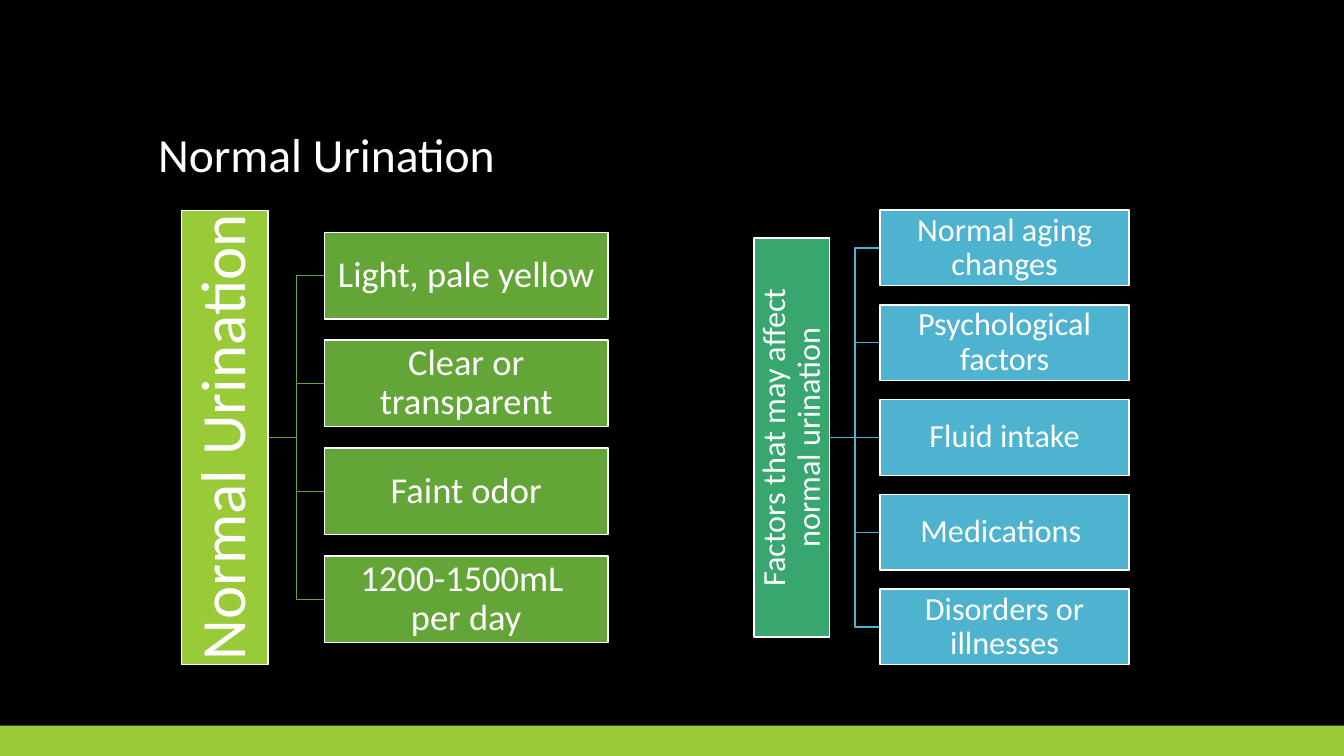
from lxml import etree
from pptx import Presentation
from pptx.dml.color import RGBColor
from pptx.enum.shapes import MSO_CONNECTOR, MSO_SHAPE
from pptx.enum.text import MSO_ANCHOR, PP_ALIGN
from pptx.oxml.ns import qn
from pptx.util import Inches, Pt

RECT = MSO_SHAPE.RECTANGLE
STRAIGHT = MSO_CONNECTOR.STRAIGHT
LEFT, CENTER = PP_ALIGN.LEFT, PP_ALIGN.CENTER
MIDDLE, BOTTOM = MSO_ANCHOR.MIDDLE, MSO_ANCHOR.BOTTOM
COLORS = {
    "black": "000000",
    "white": "FFFFFF",
    "lime": "99CB38",
    "green": "63A537",
    "teal": "37A76F",
    "blue": "4EB3CF",
}


def rgb(name):
    return RGBColor.from_string(COLORS[name])


def write(sp, text, size, align=CENTER, anchor=MIDDLE, inset=0.02, after=0.0):
    """Put one formatted paragraph into a shape; a newline breaks the line."""
    tf = sp.text_frame
    tf.word_wrap = True
    tf.vertical_anchor = anchor
    tf.margin_left = tf.margin_right = Inches(inset)
    tf.margin_top = tf.margin_bottom = Inches(min(inset, 0.05))
    p = tf.paragraphs[0]
    p.text = text
    p.alignment = align
    p.line_spacing = 0.9
    p.space_after = Pt(after)
    for r in p.runs:
        r.font.name = "Calibri"
        r.font.size = Pt(size)
        r.font.color.rgb = rgb("white")


prs = Presentation()
prs.slide_width, prs.slide_height = Inches(13.33), Inches(7.5)
slide = prs.slides.add_slide(prs.slide_layouts[6])
slide.background.fill.solid()
slide.background.fill.fore_color.rgb = rgb("black")
shapes = slide.shapes

bar = shapes.add_shape(RECT, 0, Inches(7.2), prs.slide_width, Inches(0.3))
bar.shadow.inherit = False
bar.fill.solid()
bar.fill.fore_color.rgb = rgb("lime")
bar.line.fill.background()

title = shapes.add_textbox(Inches(1.47), Inches(0.51), Inches(10.4), Inches(1.35))
write(title, "Normal Urination", 34, align=LEFT, anchor=BOTTOM, inset=0.1)

# Both trees are centred on one horizontal axis
AXIS = 4.34
trees = [
    dict(root="Normal Urination", root_color="lime", root_size=45, inset=0.03,
         root_right=2.66, root_length=4.51, thick=0.86,
         leaf_left=3.22, leaf_width=2.81, pitch=1.07, leaf_color="green", leaf_size=26,
         leaves=["Light, pale yellow", "Clear or transparent", "Faint odor",
                 "1200-1500mL \nper day"]),
    dict(root="Factors that may affect normal urination", root_color="teal",
         root_size=23, inset=0.02, root_right=8.23, root_length=3.96, thick=0.75,
         leaf_left=8.73, leaf_width=2.47, pitch=0.94, leaf_color="blue", leaf_size=23,
         leaves=["Normal aging changes", "Psychological factors", "Fluid intake",
                 "Medications ", "Disorders or illnesses"]),
]

for tree in trees:
    start, end, thick = tree["root_right"], tree["leaf_left"], tree["thick"]
    bend = (start + end) / 2
    count = len(tree["leaves"])
    centers = [AXIS + (i - (count - 1) / 2) * tree["pitch"] for i in range(count)]

    for y in reversed(centers):
        if y == AXIS:
            link = shapes.add_connector(STRAIGHT, Inches(start), Inches(y),
                                        Inches(end), Inches(y))
            etree.SubElement(link.line._get_or_add_ln().getparent(), qn("a:effectLst"))
        else:
            path = shapes.build_freeform(Inches(start), Inches(AXIS))
            path.add_line_segments([(Inches(bend), Inches(AXIS)),
                                    (Inches(bend), Inches(y)),
                                    (Inches(end), Inches(y))], close=False)
            link = path.convert_to_shape()
            link.shadow.inherit = False
            link.fill.background()
        link.line.color.rgb = rgb(tree["leaf_color"])
        link.line.width = Pt(1)

    # The root is a wide box turned to read upwards
    length = tree["root_length"]
    boxes = [(tree["root"], start - thick / 2 - length / 2, AXIS, length, 270,
              tree["root_color"], tree["root_size"], tree["inset"])]
    boxes += [(text, end, y, tree["leaf_width"], 0,
               tree["leaf_color"], tree["leaf_size"], 0.02)
              for text, y in zip(tree["leaves"], centers)]
    for text, left, center, width, rotation, color, size, inset in boxes:
        sp = shapes.add_shape(RECT, Inches(left), Inches(center - thick / 2),
                              Inches(width), Inches(thick))
        sp.rotation = rotation
        sp.shadow.inherit = False
        sp.fill.solid()
        sp.fill.fore_color.rgb = rgb(color)
        sp.line.color.rgb = rgb("white")
        sp.line.width = Pt(1)
        write(sp, text, size, inset=inset)

prs.save("out.pptx")
